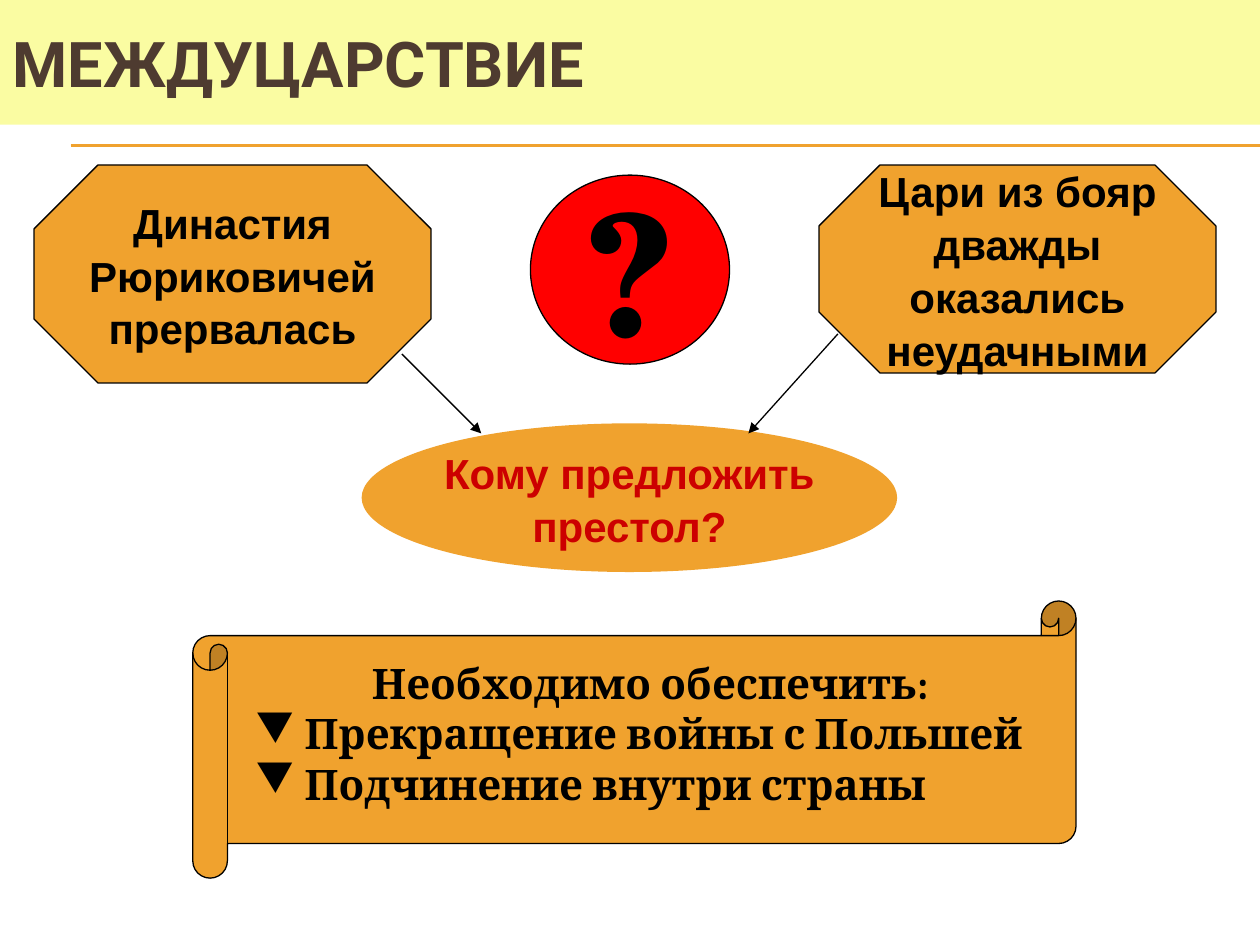
from lxml.etree import SubElement
from pptx import Presentation
from pptx.dml.color import RGBColor
from pptx.enum.shapes import MSO_CONNECTOR, MSO_SHAPE
from pptx.enum.text import MSO_ANCHOR, PP_ALIGN
from pptx.oxml.ns import qn
from pptx.util import Inches, Pt

COLORS = {
    "amber": "F0A22E",
    "cream": "FAFCA2",
    "brown": "4E3B30",
    "red": "FF0000",
    "crimson": "CC0000",
    "black": "000000",
}


def color(name):
    return RGBColor.from_string(COLORS[name])


def style_font(paragraph, face, size, ink):
    font = paragraph.font
    font.name, font.size, font.bold = face, Pt(size), True
    font.color.rgb = color(ink)


def add_title(slide, text):
    title = slide.shapes.title
    title.left, title.top = Inches(0), Inches(0)
    title.width, title.height = Inches(10), Inches(0.99)
    title.fill.solid()
    title.fill.fore_color.rgb = color("cream")
    frame = title.text_frame
    frame.text = text
    frame.vertical_anchor = MSO_ANCHOR.MIDDLE
    frame.paragraphs[0].alignment = PP_ALIGN.LEFT
    style_font(frame.paragraphs[0], "Roboto", 36, "brown")


def add_figure(slide, preset, box, fill="amber", outlined=True, adjustment=None):
    figure = slide.shapes.add_shape(preset, *map(Inches, box))
    figure.shadow.inherit = False
    figure.fill.solid()
    figure.fill.fore_color.rgb = color(fill)
    if outlined:
        figure.line.color.rgb = color("black")
        figure.line.width = Pt(0.75)
    else:
        figure.line.fill.background()
    if adjustment is not None:
        figure.adjustments[0] = adjustment
    return figure


def add_label(figure, paragraphs, face="Arial", size=24, ink="black", spacing=1.05):
    frame = figure.text_frame
    frame.word_wrap = False
    frame.vertical_anchor = MSO_ANCHOR.MIDDLE
    frame.text = "\n".join(paragraphs)
    for paragraph in frame.paragraphs:
        paragraph.alignment = PP_ALIGN.CENTER
        paragraph.line_spacing = spacing
        style_font(paragraph, face, size, ink)


def add_line(slide, start, end, ink, arrow=False):
    line = slide.shapes.add_connector(
        MSO_CONNECTOR.STRAIGHT, *map(Inches, (*start, *end)))
    line.line.color.rgb = color(ink)
    line.line.width = Pt(0.75)
    if arrow:
        SubElement(line.line._get_or_add_ln(), qn("a:tailEnd"), type="triangle")
    SubElement(line._element.spPr, qn("a:effectLst"))


def add_bullet(paragraph, mark, indent):
    properties = paragraph._p.get_or_add_pPr()
    properties.set("marL", str(Inches(indent)))
    properties.set("indent", str(-Inches(indent)))
    SubElement(properties, qn("a:buChar"), char=mark)


def add_tasks(slide, heading, tasks):
    box = slide.shapes.add_textbox(*map(Inches, (1.93, 5.17, 6.46, 1.3)))
    frame = box.text_frame
    frame.word_wrap = True
    frame.text = "\n".join([heading, *tasks])
    frame.paragraphs[0].alignment = PP_ALIGN.CENTER
    for task in frame.paragraphs[1:]:
        add_bullet(task, "▼", 0.39)
    for paragraph in frame.paragraphs:
        style_font(paragraph, "Cambria", 24, "black")


def main():
    presentation = Presentation()
    presentation.slide_width, presentation.slide_height = Inches(10), Inches(7.5)
    slide = presentation.slides.add_slide(presentation.slide_layouts[5])

    # Heading and the double rule below it
    add_title(slide, "МЕЖДУЦАРСТВИЕ")
    for y in (1.15, 1.16):
        add_line(slide, (0.56, y), (10, y), "amber")

    # Two causes
    dynasty = add_figure(slide, MSO_SHAPE.OCTAGON, (0.27, 1.31, 3.15, 1.73),
                         adjustment=0.293)
    add_label(dynasty, ["Династия\vРюриковичей", "прервалась"])
    boyar_tsars = add_figure(slide, MSO_SHAPE.OCTAGON, (6.5, 1.31, 3.15, 1.65),
                             adjustment=0.293)
    add_label(boyar_tsars, ["Цари из бояр\vдважды\vоказались\vнеудачными"])

    # The question they lead to
    throne = add_figure(slide, MSO_SHAPE.OVAL, (2.87, 3.36, 4.25, 1.18),
                        outlined=False)
    add_label(throne, ["Кому предложить\vпрестол?"], ink="crimson")
    add_line(slide, (3.19, 2.81), (3.82, 3.44), "black", arrow=True)
    add_line(slide, (6.65, 2.65), (5.94, 3.44), "black", arrow=True)
    question = add_figure(slide, MSO_SHAPE.OVAL, (4.21, 1.39, 1.58, 1.5), fill="red")
    add_label(question, ["?"], face="TeX Gyre Schola", size=96, spacing=1)

    # Scroll with the tasks
    add_figure(slide, MSO_SHAPE.HORIZONTAL_SCROLL, (1.53, 4.77, 7.01, 2.2),
               adjustment=0.125)
    add_tasks(slide, "Необходимо обеспечить:",
              ["Прекращение войны с Польшей", "Подчинение внутри страны"])

    presentation.save("out.pptx")


if __name__ == "__main__":
    main()
